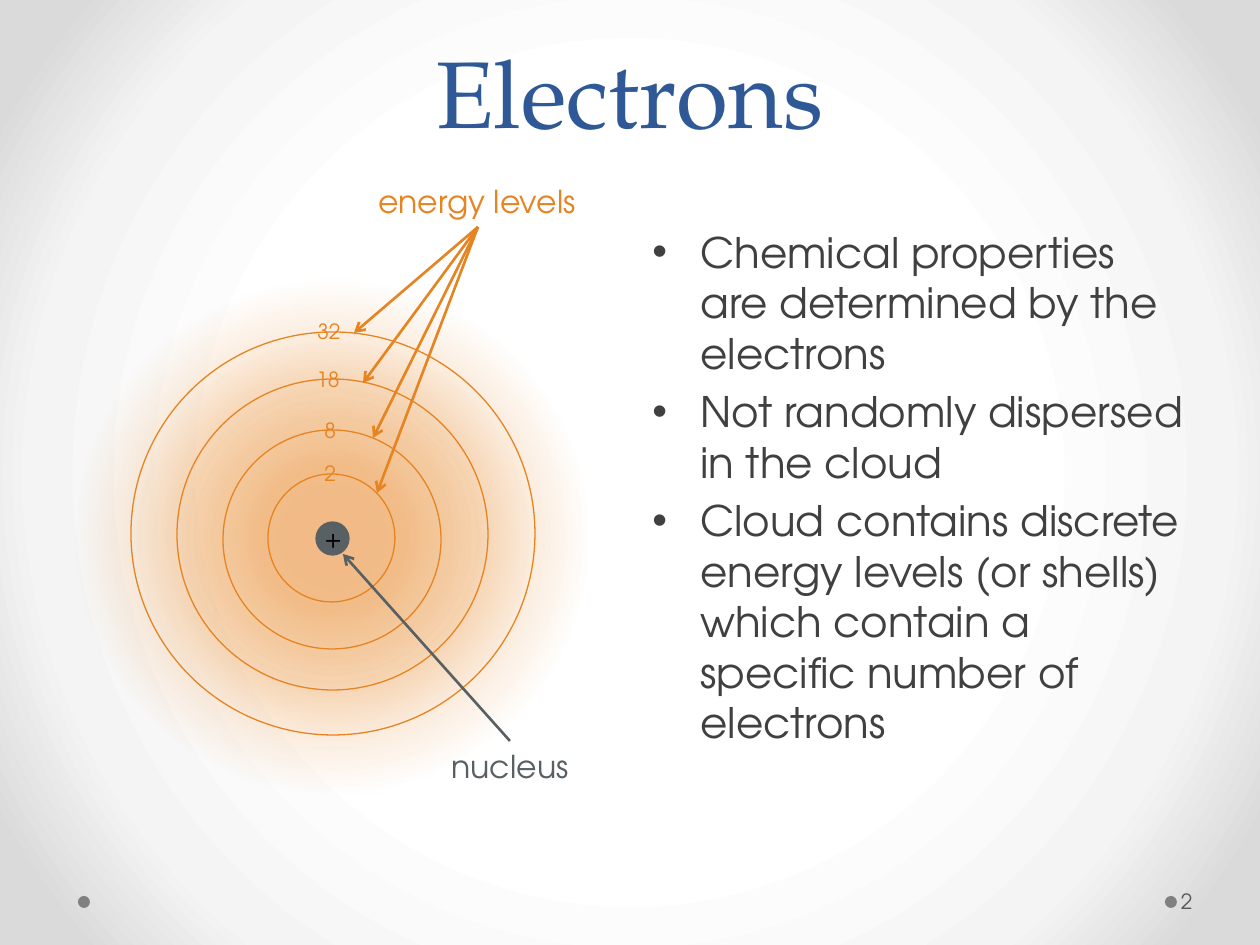
from lxml import etree
from pptx import Presentation
from pptx.dml.color import RGBColor
from pptx.enum.shapes import MSO_CONNECTOR, MSO_SHAPE
from pptx.enum.text import MSO_ANCHOR as Anchor, PP_ALIGN as Align
from pptx.oxml.ns import qn
from pptx.util import Pt

PX = 914400 // 126
BLUE = RGBColor(0x2F, 0x58, 0x97)
ORANGE = RGBColor(0xE6, 0x84, 0x22)
SLATE = RGBColor(0x58, 0x60, 0x64)
DARK = RGBColor(0x40, 0x40, 0x40)
GRAY = RGBColor(0x80, 0x80, 0x80)
PAGE_GRAY = RGBColor(0x59, 0x59, 0x59)
BLACK = RGBColor(0, 0, 0)
SANS = "TeX Gyre Adventor"
SERIF = "TeX Gyre Pagella"

prs = Presentation()
prs.slide_width, prs.slide_height = 1260 * PX, 945 * PX
slide = prs.slides.add_slide(prs.slide_layouts[6])


def add_text(box, lines, size, color, align=Align.LEFT, font=SANS):
    textbox = slide.shapes.add_textbox(*(v * PX for v in box))
    frame = textbox.text_frame
    frame.word_wrap = True
    frame.text = "\n".join(lines)
    for paragraph in frame.paragraphs:
        paragraph.alignment = align
        paragraph.font.name = font
        paragraph.font.size = Pt(size)
        paragraph.font.color.rgb = color
    return frame


def set_radial(element, stops):
    """Turn the gradient fill in element into a centred circle of (position, color, alpha) stops."""
    gradient = element.find(".//" + qn("a:gradFill"))
    for child in list(gradient):
        gradient.remove(child)
    stop_list = etree.SubElement(gradient, qn("a:gsLst"))
    for position, color, alpha in stops:
        stop = etree.SubElement(stop_list, qn("a:gs"), pos=str(position * 1000))
        rgb = etree.SubElement(stop, qn("a:srgbClr"), val=color)
        if alpha < 100:
            etree.SubElement(rgb, qn("a:alpha"), val=str(alpha * 1000))
    circle = etree.SubElement(gradient, qn("a:path"), {"path": "circle"})
    etree.SubElement(circle, qn("a:fillToRect"), l="50000", t="50000", r="50000", b="50000")


# Background
slide.background.fill.gradient()
set_radial(slide.element, [(50, "FFFFFF", 100), (76, "F4F4F4", 100), (92, "DADADA", 100)])

# Title
title = add_text((63, 1, 1134, 153), ["Electrons"], 54, BLUE, Align.CENTER, SERIF)
title.vertical_anchor = Anchor.BOTTOM
title.paragraphs[0].line_spacing = Pt(58)

# Bulleted points
points = add_text((640, 220, 557, 624), [
    "Chemical properties are determined by the electrons",
    "Not randomly dispersed in the cloud",
    "Cloud contains discrete energy levels (or shells) which contain a specific number of electrons",
], 24, DARK)
for point in points.paragraphs:
    point.space_before = Pt(4.8)
    properties = point._p.get_or_add_pPr()
    properties.set("marL", str(48 * PX))
    properties.set("indent", str(-48 * PX))
    etree.SubElement(properties, qn("a:buFont"), typeface="Arial")
    etree.SubElement(properties, qn("a:buChar"), char="•")
    # Bullet settings must come before the default run properties
    properties.append(properties.find(qn("a:defRPr")))

# Footer dots, electron cloud, nucleus and energy levels: left, top, width, height, fill, line
CLOUD = "cloud"
for left, top, width, height, fill, line in [
    (1165, 896, 12, 12, GRAY, None),
    (78, 896, 12, 12, GRAY, None),
    (72, 277, 520, 520, CLOUD, None),
    (316, 522, 33, 33, SLATE, SLATE),
    (268, 474, 127, 128, None, ORANGE),
    (223, 430, 218, 219, None, ORANGE),
    (177, 379, 311, 311, None, ORANGE),
    (131, 332, 404, 403, None, ORANGE),
]:
    circle = slide.shapes.add_shape(MSO_SHAPE.OVAL, left * PX, top * PX, width * PX, height * PX)
    circle.shadow.inherit = False
    if fill is None:
        circle.fill.background()
    elif fill == CLOUD:
        circle.fill.gradient()
        fade = [(0, 55), (20, 53), (40, 35), (55, 14), (70, 0), (100, 0)]
        set_radial(circle.element, [(position, str(ORANGE), alpha) for position, alpha in fade])
    else:
        circle.fill.solid()
        circle.fill.fore_color.rgb = fill
    if line is None:
        circle.line.fill.background()
    else:
        circle.line.color.rgb = line
        circle.line.width = Pt(0.75)

# Electrons per level, and the nuclear charge
for left, top, width, label, size, color in [
    (312, 454, 40, "2", 12, ORANGE),
    (312, 517, 33, "+", 14, BLACK),
    (312, 411, 40, "8", 12, ORANGE),
    (304, 360, 59, "18", 12, ORANGE),
    (305, 312, 59, "32", 12, ORANGE),
]:
    add_text((left, top, width, 38), [label], size, color)

# Arrows from the captions
LEVELS_START = (478, 227)
for start, end, color in [
    (LEVELS_START, (354, 333), ORANGE),
    (LEVELS_START, (363, 383), ORANGE),
    (LEVELS_START, (373, 438), ORANGE),
    (LEVELS_START, (377, 493), ORANGE),
    ((510, 741), (343, 554), SLATE),
]:
    arrow = slide.shapes.add_connector(MSO_CONNECTOR.STRAIGHT, *(v * PX for v in start + end))
    arrow.line.color.rgb = color
    arrow.line.width = Pt(1.5)
    etree.SubElement(arrow.line._get_or_add_ln(), qn("a:tailEnd"), type="arrow")
    etree.SubElement(arrow.element.spPr, qn("a:effectLst"))

# Captions
add_text((432, 741, 156, 50), ["nucleus"], 18, SLATE, Align.CENTER)
add_text((353, 176, 248, 50), ["energy levels"], 18, ORANGE, Align.CENTER)

# Page number
page = add_text((1177, 876, 77, 50), ["2"], 12, PAGE_GRAY)
page.vertical_anchor = Anchor.MIDDLE
page.margin_left = 4 * PX

prs.save("out.pptx")
